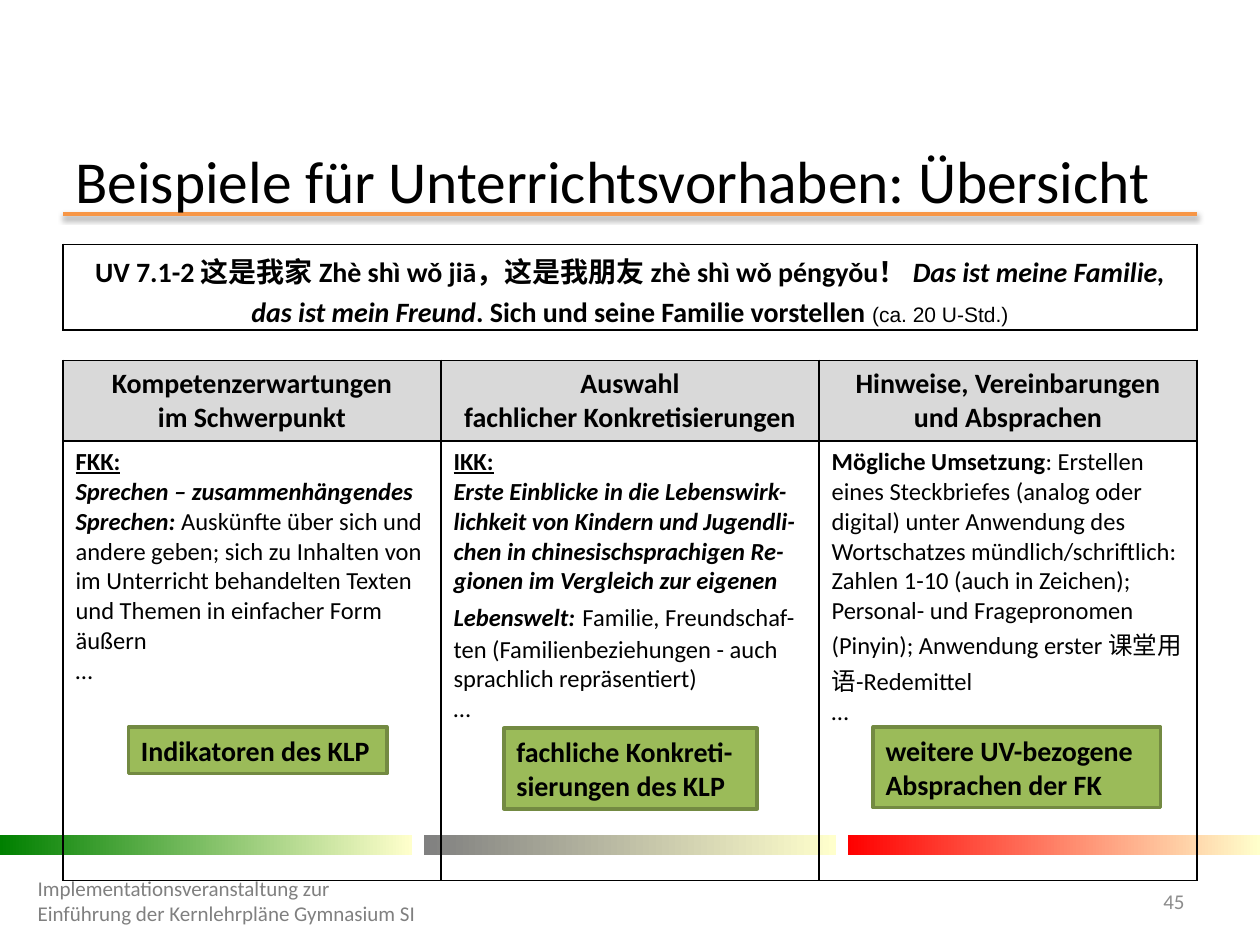
from collections import namedtuple

from lxml.etree import SubElement
from pptx import Presentation
from pptx.dml.color import RGBColor
from pptx.enum.shapes import MSO_CONNECTOR, MSO_SHAPE
from pptx.enum.text import MSO_ANCHOR, PP_ALIGN
from pptx.oxml.ns import qn
from pptx.util import Inches, Pt

Box = namedtuple("Box", "left top width height")
COLUMNS, ROWS = 10, 7.5
UNIT = Inches(1)
FONT = "Calibri"

BARS = ["008000", "808080", "FF0000"]
UNIT_TITLE = [[
    ("UV 7.1-2 这是我家 Zhè shì wǒ jiā，这是我朋友 zhè shì wǒ péngyǒu！ ", "b"),
    ("Das ist meine Familie, das ist mein Freund", "bi"),
    (". Sich und seine Familie vorstellen ", "b"),
    ("(ca. 20 U-Std.)", "", 12, "Arial"),
]]
HEADERS = [
    "Kompetenzerwartungen\vim Schwerpunkt",
    "Auswahl\vfachlicher Konkretisierungen",
    "Hinweise, Vereinbarungen und Absprachen",
]
BODIES = [
    [
        [("FKK:", "bu")],
        [("Sprechen – zusammenhängendes Sprechen: ", "bi"),
         ("Auskünfte über sich und andere geben; sich zu Inhalten von im "
          "Unterricht behandelten Texten und Themen in einfacher Form "
          "äußern\v…", "")],
    ],
    [
        [("IKK:", "bu")],
        [("Erste Einblicke in die Lebenswirk-lichkeit von Kindern und "
          "Jugendli-chen in chinesischsprachigen Re-gionen im Vergleich zur "
          "eigenen Lebenswelt:", "bi"),
         (" ", "b", 18),
         ("Familie, Freundschaf-ten (Familienbeziehungen - auch sprachlich "
          "repräsentiert)", "")],
        [("…", "")],
    ],
    [
        [("Mögliche Umsetzung", "b"),
         (": Erstellen eines Steckbriefes (analog oder digital) unter "
          "Anwendung des Wortschatzes mündlich/schriftlich: Zahlen 1-10 (auch "
          "in Zeichen); Personal- und Fragepronomen (Pinyin); Anwendung "
          "erster 课堂用语-Redemittel", "")],
        [("…", "")],
    ],
]
LABELS = [
    ("Indikatoren des KLP", Box(0.52, 3.83, 2.05, 0.37)),
    ("fachliche Konkreti-sierungen des KLP", Box(3.5, 3.84, 2.01, 0.64)),
    ("weitere UV-bezogene Absprachen der FK", Box(6.43, 3.83, 2.28, 0.64)),
]


def rgb(value):
    """Turn a hex string into a colour."""
    return RGBColor.from_string(value)


def emu(box):
    """Turn grid units into slide lengths."""
    return [int(length * UNIT) for length in box]


def add_span(para, text, flags="", size=None, font=None):
    """Add text to a paragraph, with line breaks at vertical tabs."""
    for index, part in enumerate(text.split("\v")):
        if index:
            para.add_line_break()
        span = para.add_run()
        span.text = part
        for flag, name in zip("biu", ("bold", "italic", "underline")):
            if flag in flags:
                setattr(span.font, name, True)
        if size:
            span.font.size = Pt(size)
        if font:
            span.font.name = font


def write(frame, paragraphs, size, color="000000", align=PP_ALIGN.LEFT, spacing=None):
    """Fill a text frame with paragraphs of spans."""
    for index, spans in enumerate(paragraphs):
        para = frame.add_paragraph() if index else frame.paragraphs[0]
        para.alignment = align
        if spacing:
            para.line_spacing = spacing
        para.font.name = FONT
        para.font.size = Pt(size)
        para.font.color.rgb = rgb(color)
        for span in spans:
            add_span(para, *span)


def add_text(page, box, text, size, color, align=PP_ALIGN.LEFT):
    """Place a vertically centred text box."""
    frame = page.shapes.add_textbox(*emu(box)).text_frame
    frame.word_wrap = True
    frame.vertical_anchor = MSO_ANCHOR.MIDDLE
    write(frame, [[(text,)]], size, color, align)


def add_heading(page, box):
    """Draw the title and the shadowed rule under it."""
    left, top, width, height = emu(box)
    rule = page.shapes.add_connector(
        MSO_CONNECTOR.STRAIGHT, left, top + height, left + width, top + height)
    rule.line.color.rgb = rgb("F79646")
    rule.line.width = Pt(2)
    effects = SubElement(rule._element.spPr, qn("a:effectLst"))
    shadow = SubElement(effects, qn("a:outerShdw"), blurRad=str(Pt(3.1)),
                        dist=str(Pt(1.6)), dir="5400000", rotWithShape="0")
    black = SubElement(shadow, qn("a:srgbClr"), val="000000")
    SubElement(black, qn("a:alpha"), val="38000")
    add_text(page, Box(box.left, box.top, box.width, 0.39),
             "Beispiele für Unterrichtsvorhaben: Übersicht", 34, "000000")


def add_bars(page, box):
    """Draw three fading bars spread evenly over the box."""
    width = 3.27
    step = (box.width - width) / (len(BARS) - 1)
    for index, color in enumerate(BARS):
        place = Box(box.left + index * step, box.top, width, box.height)
        bar = page.shapes.add_shape(MSO_SHAPE.RECTANGLE, *emu(place))
        bar.shadow.inherit = False
        bar.line.fill.background()
        bar.fill.gradient()
        bar.fill.gradient_angle = 0
        for stop, shade in zip(bar.fill.gradient_stops, (color, "FFFFCC")):
            stop.color.rgb = rgb(shade)


def style_cell(cell, open_sides=False, fill=None):
    """Set the borders and fill of a cell."""
    properties = cell._tc.get_or_add_tcPr()
    for side in "LRTB":
        edge = SubElement(properties, qn(f"a:ln{side}"), w=str(Pt(1)))
        if open_sides and side in "LR":
            SubElement(edge, qn("a:noFill"))
        else:
            SubElement(SubElement(edge, qn("a:solidFill")), qn("a:srgbClr"), val="000000")
    if fill:
        cell.fill.solid()
        cell.fill.fore_color.rgb = rgb(fill)
    else:
        cell.fill.background()


def add_plan(page, box):
    """Build the table of the teaching unit."""
    heights = [0.68, 0.24, 0.64]
    heights.append(box.height - sum(heights))
    table = page.shapes.add_table(len(heights), len(HEADERS), *emu(box)).table
    table.first_row = table.horz_banding = False
    for row, height in zip(table.rows, heights):
        row.height = int(height * UNIT)
    for column in range(len(HEADERS)):
        unit, gap, header, body = (table.cell(row, column) for row in range(4))
        style_cell(unit)
        style_cell(gap, open_sides=True)
        style_cell(header, fill="D9D9D9")
        style_cell(body)
        gap.margin_top = gap.margin_bottom = 0
        gap.text_frame.paragraphs[0].font.size = Pt(8)
        header.vertical_anchor = MSO_ANCHOR.MIDDLE
        write(header.text_frame, [[(HEADERS[column], "b")]], 16, align=PP_ALIGN.CENTER)
        write(body.text_frame, BODIES[column], 14)
    title = table.cell(0, 0)
    title.merge(table.cell(0, 2))
    table.cell(1, 0).merge(table.cell(1, 1))
    title.margin_left = title.margin_right = Inches(0.07)
    title.margin_top = title.margin_bottom = 0
    title.vertical_anchor = MSO_ANCHOR.MIDDLE
    write(title.text_frame, UNIT_TITLE, 16, align=PP_ALIGN.CENTER, spacing=1.15)


def add_labels(page, box):
    """Place the green labels over the table columns."""
    for text, place in LABELS:
        spot = place._replace(left=box.left + place.left, top=box.top + place.top)
        label = page.shapes.add_shape(MSO_SHAPE.RECTANGLE, *emu(spot))
        label.shadow.inherit = False
        label.fill.solid()
        label.fill.fore_color.rgb = rgb("9BBB59")
        label.line.color.rgb = rgb("738A42")
        label.line.width = Pt(2)
        label.text_frame.word_wrap = True
        write(label.text_frame, [[(text, "b")]], 16)


def add_footer(page, box):
    """Place the event name and the page number."""
    add_text(page, box._replace(width=3.24),
             "Implementationsveranstaltung zur Einführung der Kernlehrpläne Gymnasium SI",
             12, "808080")
    number = box._replace(left=box.left + box.width - 0.64, width=0.64)
    add_text(page, number, "45", 12, "8C8C8C", PP_ALIGN.RIGHT)


def main():
    """Build the deck."""
    deck = Presentation()
    deck.slide_width, deck.slide_height = emu((COLUMNS, ROWS))
    page = deck.slides.add_slide(deck.slide_layouts[6])
    plan = Box(0.5, 1.94, 9, 5.05)
    add_bars(page, Box(0, 6.63, COLUMNS, 0.16))
    add_heading(page, Box(0.5, 1.23, 9, 0.47))
    add_footer(page, Box(0.2, 6.95, 9.3, 0.4))
    add_plan(page, plan)
    add_labels(page, plan)
    deck.save("out.pptx")


if __name__ == "__main__":
    main()
